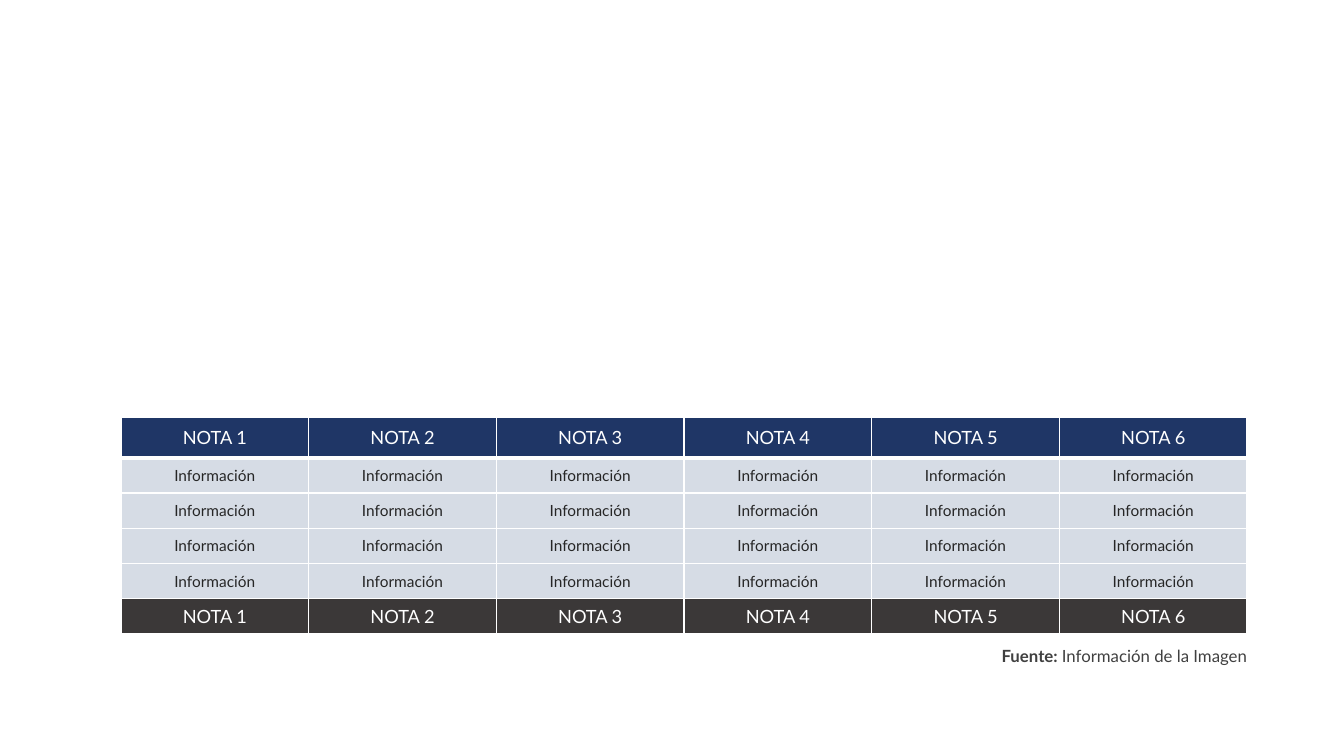
"""Build a slide with a table of six notes and its source line."""
from dataclasses import dataclass

from lxml import etree
from pptx import Presentation
from pptx.dml.color import RGBColor
from pptx.enum.text import MSO_ANCHOR, PP_ALIGN
from pptx.oxml.ns import qn
from pptx.util import Inches, Pt

CENTER, RIGHT = PP_ALIGN.CENTER, PP_ALIGN.RIGHT
MIDDLE = MSO_ANCHOR.MIDDLE
WHITE = RGBColor(0xFF, 0xFF, 0xFF)
NAVY = RGBColor(0x1F, 0x36, 0x66)
PALE_BLUE = RGBColor(0xD6, 0xDC, 0xE5)
CHARCOAL = RGBColor(0x3B, 0x38, 0x38)
INK = RGBColor(0x26, 0x26, 0x26)
GRAY = RGBColor(0x40, 0x40, 0x40)
FONT = "Lato"
COLUMNS = 6


@dataclass(frozen=True)
class NoteRow:
    labels: list[str]
    fill: RGBColor
    color: RGBColor
    size: float
    height: float = 0.35
    top_rule: float = 1
    bottom_rule: float = 1


def add_borders(cell, row: NoteRow) -> None:
    properties = cell._tc.get_or_add_tcPr()
    rules = {"a:lnL": 1, "a:lnR": 1, "a:lnT": row.top_rule, "a:lnB": row.bottom_rule}
    for tag, width in rules.items():
        line = etree.SubElement(properties, qn(tag), w=str(Pt(width)))
        fill = etree.SubElement(line, qn("a:solidFill"))
        etree.SubElement(fill, qn("a:srgbClr"), val=str(WHITE))


def format_cell(cell, label: str, row: NoteRow) -> None:
    add_borders(cell, row)
    cell.fill.solid()
    cell.fill.fore_color.rgb = row.fill
    cell.vertical_anchor = MIDDLE
    cell.text = label
    paragraph = cell.text_frame.paragraphs[0]
    paragraph.alignment = CENTER
    paragraph.font.name = FONT
    paragraph.font.size = Pt(row.size)
    paragraph.font.bold = False
    paragraph.font.color.rgb = row.color


def add_notes_table(slide, rows: list[NoteRow]) -> None:
    height = sum(row.height for row in rows)
    table = slide.shapes.add_table(
        len(rows), COLUMNS, Inches(1.2), Inches(4.14), Inches(11.17), Inches(height)
    ).table
    table.first_row = False
    table.horz_banding = False
    for table_row, row in zip(table.rows, rows):
        table_row.height = Inches(row.height)
        for cell, label in zip(table_row.cells, row.labels):
            format_cell(cell, label, row)


def add_source(slide) -> None:
    frame = slide.shapes.add_textbox(
        Inches(8.07), Inches(6.39), Inches(4.43), Inches(0.25)
    ).text_frame
    frame.word_wrap = True
    frame.vertical_anchor = MIDDLE
    frame.margin_left = frame.margin_right = Inches(0.13)
    frame.margin_top = frame.margin_bottom = Inches(0.05)
    paragraph = frame.paragraphs[0]
    paragraph.alignment = RIGHT
    paragraph.line_spacing = 0.9
    paragraph.font.name = FONT
    paragraph.font.size = Pt(12)
    paragraph.font.color.rgb = GRAY
    source_label = paragraph.add_run()
    source_label.text = "Fuente: "
    source_label.font.bold = True
    paragraph.add_run().text = "Información de la Imagen"


def main() -> None:
    presentation = Presentation()
    presentation.slide_width = Inches(13.33)
    presentation.slide_height = Inches(7.5)
    slide = presentation.slides.add_slide(presentation.slide_layouts[6])
    notes = [f"NOTA {number}" for number in range(1, COLUMNS + 1)]
    details = ["Información"] * COLUMNS
    header = NoteRow(notes, NAVY, WHITE, 13, height=0.4, bottom_rule=3)
    first_detail = NoteRow(details, PALE_BLUE, INK, 11, top_rule=3)
    detail = NoteRow(details, PALE_BLUE, INK, 11)
    footer = NoteRow(notes, CHARCOAL, WHITE, 13)
    add_notes_table(slide, [header, first_detail, *[detail] * 3, footer])
    add_source(slide)
    presentation.save("out.pptx")


if __name__ == "__main__":
    main()
